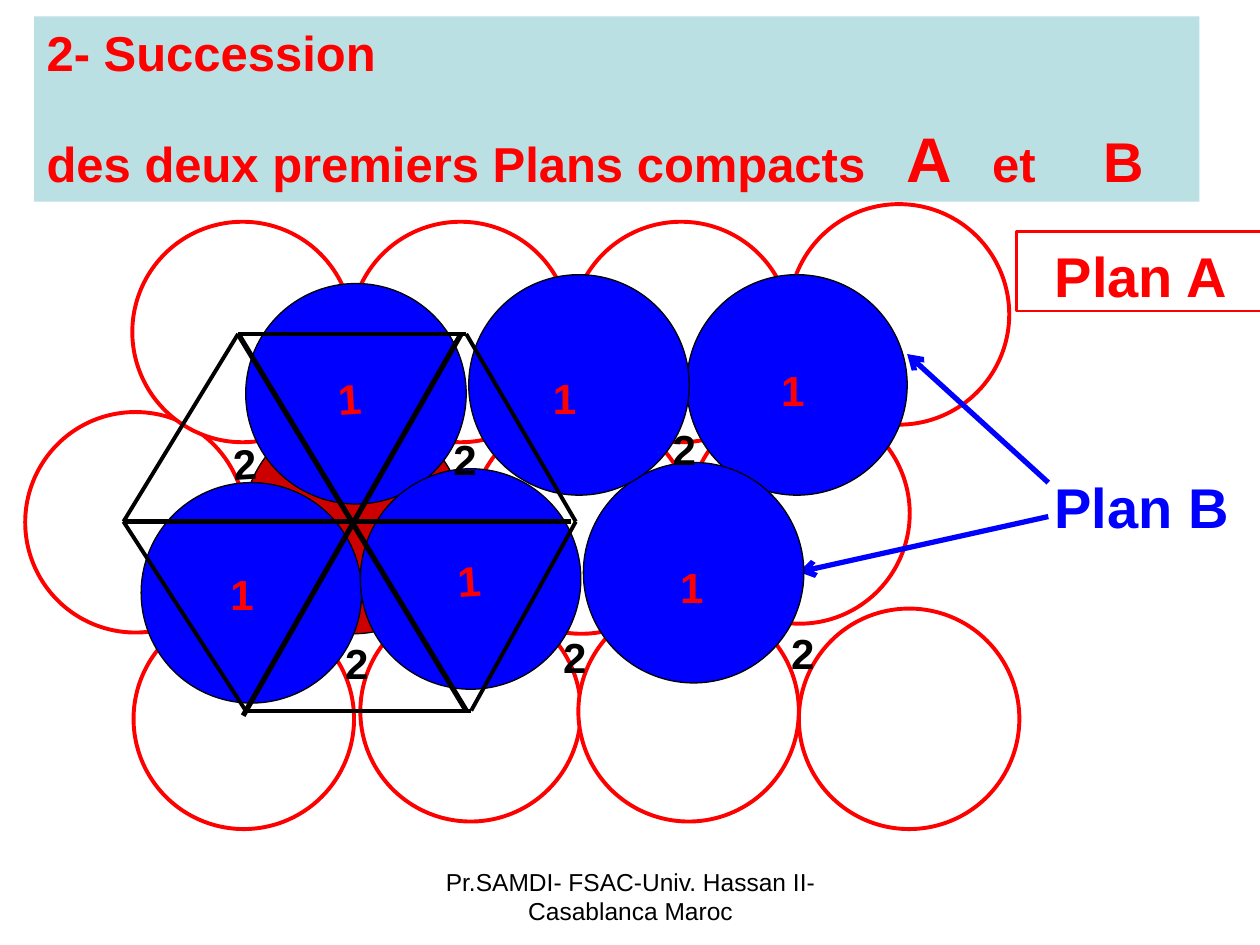
import itertools
from dataclasses import dataclass

import pptx
import pptx.dml.color
import pptx.enum.shapes
import pptx.enum.text
import pptx.oxml
import pptx.oxml.ns
import pptx.util

Inches = pptx.util.Inches
Pt = pptx.util.Pt
RGB = pptx.dml.color.RGBColor
Align = pptx.enum.text.PP_ALIGN
Anchor = pptx.enum.text.MSO_ANCHOR


@dataclass(frozen=True)
class Theme:
    font: str = "Arial"
    red: RGB = RGB(255, 0, 0)
    dark_red: RGB = RGB(204, 0, 0)
    blue: RGB = RGB(0, 0, 255)
    pale: RGB = RGB(187, 224, 227)
    black: RGB = RGB(0, 0, 0)
    white: RGB = RGB(255, 255, 255)
    title_size: int = 28
    letter_a_size: int = 36
    plan_size: int = 32
    site_size: int = 24
    footer_size: int = 14


THEME = Theme()
SPHERE = 1.75

# Sphere positions, relative to the box of the packing
PLANE_A_LEFT = [(2.58, 0.14), (3.54, 1.66), (0, 1.65), (2.66, 3.15), (0.86, 3.21), (0.85, 0.14)]
CENTRE_SPHERE = [(1.73, 1.66)]
PLANE_A_RIGHT = [(4.33, 0.14), (4.39, 3.15), (6.14, 3.21), (5.27, 1.58), (6.06, 0)]
PLANE_B = [(1.75, 0.63), (0.92, 2.21), (2.66, 2.1), (5.25, 0.56), (4.43, 2.05), (3.52, 0.56)]

# Site labels: left, top, rotation
SITES_1 = [(2.38, 1.25, -3.6), (1.53, 2.81, 0), (3.33, 2.7, -3.4),
           (5.9, 1.19, 0), (4.09, 1.26, 0), (5.1, 2.76, 0)]
SITES_2 = [(5.04, 1.66, 0), (4.17, 3.31, 0), (5.98, 3.28, 0),
           (3.3, 1.74, 0), (2.44, 3.36, 0), (1.55, 1.77, -3.6)]

# Hexagon corners and the three diagonals
HEXAGON = [(0.91, 0), (2.72, 0), (3.59, 1.49), (2.76, 2.99), (0.97, 2.99), (0, 1.49)]
DIAGONALS = [((0.91, 0), (2.72, 2.99)), ((2.68, 0), (0.95, 3.03)), ((0, 1.49), (3.55, 1.49))]


def format_run(run, size, color, bold=True):
    run.font.name = THEME.font
    run.font.size = Pt(size)
    run.font.bold = bold
    run.font.color.rgb = color


def add_label(slide, box, text, size, color, bold=True, align=Align.LEFT, rotation=0):
    label = slide.shapes.add_textbox(*map(Inches, box))
    label.rotation = rotation
    frame = label.text_frame
    frame.word_wrap = True
    frame.margin_top = Inches(0.08 if bold else 0.05)
    frame.text = text
    paragraph = frame.paragraphs[0]
    paragraph.alignment = align
    format_run(paragraph.runs[0], size, color, bold)
    return label


def add_line(slide, origin, start, end, color, width, arrow=False):
    left, top = origin
    line = slide.shapes.add_connector(
        pptx.enum.shapes.MSO_CONNECTOR.STRAIGHT,
        Inches(left + start[0]), Inches(top + start[1]),
        Inches(left + end[0]), Inches(top + end[1]))
    line.line.color.rgb = color
    line.line.width = Pt(width)
    if arrow:
        head = pptx.oxml.parse_xml(
            f'<a:tailEnd {pptx.oxml.ns.nsdecls("a")} type="arrow"/>')
        line.line._get_or_add_ln().append(head)
    properties = line._element.spPr
    properties.append(pptx.oxml.parse_xml(
        f'<a:effectLst {pptx.oxml.ns.nsdecls("a")}/>'))


def add_title(slide, box):
    title = slide.shapes.title
    title.left, title.top, title.width, title.height = map(Inches, box)
    title.fill.solid()
    title.fill.fore_color.rgb = THEME.pale
    frame = title.text_frame
    frame.word_wrap = True
    frame.auto_size = pptx.enum.text.MSO_AUTO_SIZE.NONE
    frame.vertical_anchor = Anchor.MIDDLE
    frame.text = "2- Succession"
    second = frame.add_paragraph()
    second.space_before = Pt(22)
    for text in ("des deux premiers Plans compacts   ", "A", "   et     ", "B"):
        second.add_run().text = text
    for paragraph in frame.paragraphs:
        paragraph.alignment = Align.LEFT
        for run in paragraph.runs:
            format_run(run, THEME.title_size, THEME.red)
    second.runs[1].font.size = Pt(THEME.letter_a_size)
    second.runs[3].font.size = Pt(THEME.plan_size)


def add_spheres(slide, origin, positions, fill, line_color, line_width):
    for left, top in positions:
        sphere = slide.shapes.add_shape(
            pptx.enum.shapes.MSO_SHAPE.OVAL,
            Inches(origin[0] + left), Inches(origin[1] + top),
            Inches(SPHERE), Inches(SPHERE))
        sphere.shadow.inherit = False
        sphere.fill.solid()
        sphere.fill.fore_color.rgb = fill
        sphere.line.color.rgb = line_color
        sphere.line.width = Pt(line_width)


def add_plane_a(slide, origin):
    add_spheres(slide, origin, PLANE_A_LEFT, THEME.white, THEME.red, 2.25)
    add_spheres(slide, origin, CENTRE_SPHERE, THEME.dark_red, THEME.black, 0.75)
    add_spheres(slide, origin, PLANE_A_RIGHT, THEME.white, THEME.red, 2.25)


def add_hexagon(slide, origin):
    for start, end in itertools.pairwise(HEXAGON + HEXAGON[:1]):
        add_line(slide, origin, start, end, THEME.black, 2.25)
    for start, end in DIAGONALS:
        add_line(slide, origin, start, end, THEME.black, 3)


def add_sites(slide, origin, sites, text, color):
    for left, top, rotation in sites:
        box = (origin[0] + left, origin[1] + top, 0.59, 0.5)
        add_label(slide, box, text, THEME.site_size, color, rotation=rotation)


def add_plan_a_label(slide, box):
    label = add_label(slide, box, "Plan A", THEME.plan_size, THEME.red, align=Align.CENTER)
    label.fill.solid()
    label.fill.fore_color.rgb = THEME.white
    label.line.color.rgb = THEME.red
    label.line.width = Pt(1.5)


def add_plan_b_label(slide, box):
    add_label(slide, box, "Plan B", THEME.plan_size, THEME.blue)
    for start, end in (((0.05, 0.16), (-1.07, -0.86)), ((0.05, 0.43), (-1.93, 0.87))):
        add_line(slide, box[:2], start, end, THEME.blue, 3, arrow=True)


def main():
    presentation = pptx.Presentation()
    presentation.slide_width = Inches(10)
    presentation.slide_height = Inches(7.5)
    slide = presentation.slides.add_slide(presentation.slide_layouts[5])
    packing = (0.2, 1.62)

    # Title and first plane
    add_title(slide, (0.27, 0.13, 9.25, 1.47))
    add_plane_a(slide, packing)
    add_plan_a_label(slide, (8.07, 1.84, 1.97, 0.63))

    # Second plane, over the first
    add_plan_b_label(slide, (8.27, 3.67, 1.97, 0.63))
    add_spheres(slide, packing, PLANE_B, THEME.blue, THEME.black, 0.75)

    # Hexagon and site numbers
    add_hexagon(slide, (0.98, 2.65))
    add_sites(slide, packing, SITES_1, "1", THEME.red)
    add_sites(slide, packing, SITES_2, "2", THEME.black)

    # Footer
    add_label(slide, (3.42, 6.83, 3.17, 0.52),
              "Pr.SAMDI- FSAC-Univ. Hassan II- Casablanca Maroc",
              THEME.footer_size, THEME.black, bold=False, align=Align.CENTER)
    presentation.save("out.pptx")


if __name__ == "__main__":
    main()
